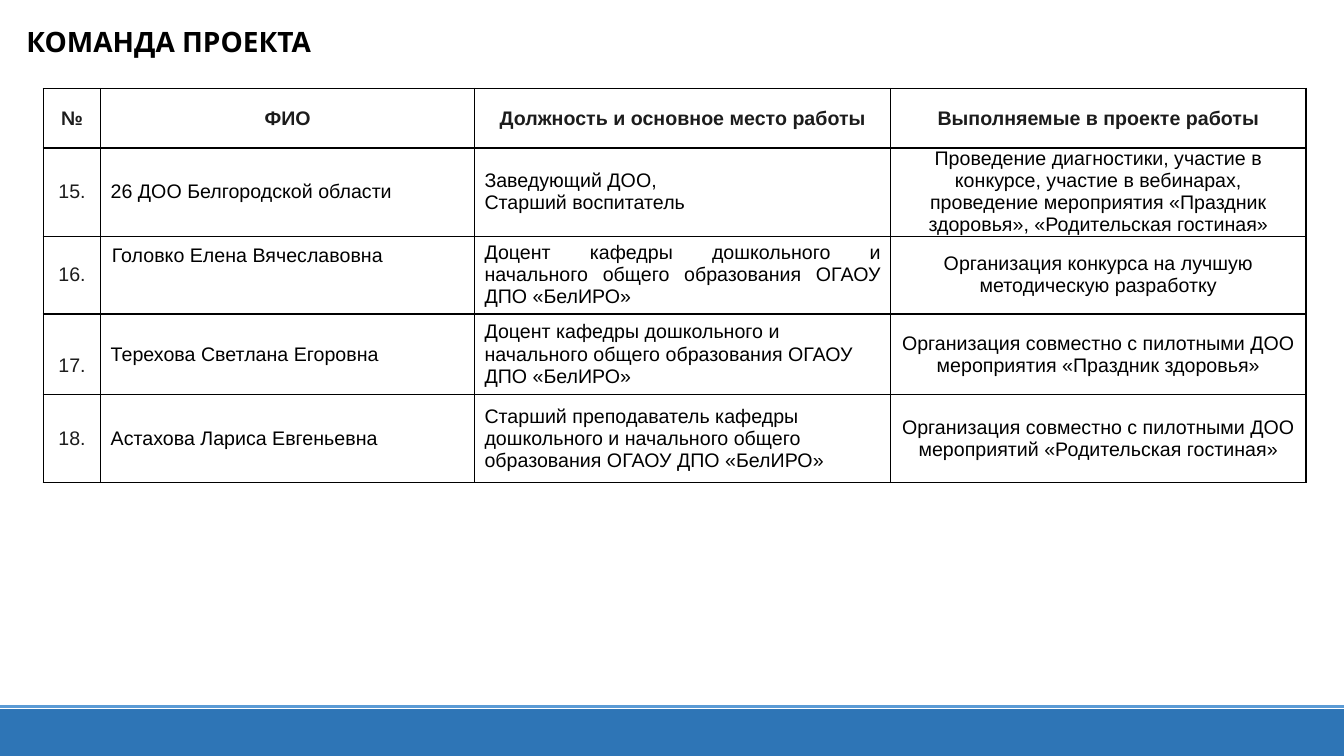
from lxml import etree
from pptx import Presentation, util as u
from pptx.dml.color import RGBColor
from pptx.enum import shapes, text
from pptx.oxml import parse_xml
from pptx.oxml.ns import nsdecls, qn

COLORS = {"black": "000000", "ink": "1C1C1C", "band": "2E75B6", "stripe": "5B9BD5"}
ALIGN = text.PP_ALIGN
ANCHOR = text.MSO_ANCHOR
INSTITUTE = "начального общего образования ОГАОУ ДПО «БелИРО»"
HEADINGS = ["№", "ФИО", "Должность и основное место работы", "Выполняемые в проекте работы"]
MEMBERS = [
    ["15.", "26 ДОО Белгородской области", "Заведующий ДОО,\nСтарший воспитатель",
     "Проведение диагностики, участие в конкурсе, участие в вебинарах, "
     "проведение мероприятия «Праздник здоровья», «Родительская гостиная»"],
    ["16.", "Головко Елена Вячеславовна", f"Доцент кафедры дошкольного и {INSTITUTE}",
     "Организация конкурса на лучшую методическую разработку"],
    ["17.", "Терехова Светлана Егоровна", f"Доцент кафедры дошкольного и {INSTITUTE}",
     "Организация совместно с пилотными ДОО мероприятия «Праздник здоровья»"],
    ["18.", "Астахова Лариса Евгеньевна",
     f"Старший преподаватель кафедры дошкольного и {INSTITUTE}",
     "Организация совместно с пилотными ДОО мероприятий «Родительская гостиная»"],
]
COLUMN_WIDTHS = [1.45, 9.42, 10.49, 10.46]
ROW_HEIGHTS = [1.5, 2.21, 1.96, 2.03, 2.21]
COLUMN_ALIGN = [ALIGN.CENTER, ALIGN.LEFT, ALIGN.LEFT, ALIGN.CENTER]
MARGINS = {"margin_left": 0.25, "margin_top": 0.13, "margin_right": 0.25, "margin_bottom": 0.13}
TASK_MARGINS = {"margin_left": 0.19, "margin_top": 0, "margin_right": 0.19, "margin_bottom": 0}
CELL_MARGINS = {(2, 1): {"margin_left": 0.28, "margin_right": 0.28}, (3, 0): {"margin_top": 0.69}}
CELL_ALIGN = {(1, 2): ALIGN.JUSTIFY, (2, 2): ALIGN.JUSTIFY}


def color(name):
    """Return a palette colour."""
    return RGBColor.from_string(COLORS[name])


def apply(target, values):
    """Set every attribute in values on the target."""
    for name, value in values.items():
        setattr(target, name, value)


def format_text(frame, font, paragraph_values):
    """Format all paragraphs and their text in a frame."""
    font = dict(font)
    font_color = color(font.pop("color"))
    for paragraph in frame.paragraphs:
        apply(paragraph, paragraph_values)
        for run in paragraph.runs:
            apply(run.font, font)
            run.font.color.rgb = font_color


def add_title(slide, left, top, width, height):
    """Place and format the slide title."""
    title = slide.shapes.title
    apply(title, {"left": u.Cm(left), "top": u.Cm(top),
                  "width": u.Cm(width), "height": u.Cm(height)})
    title.text_frame.text = "КОМАНДА ПРОЕКТА"
    apply(title.text_frame, {"vertical_anchor": ANCHOR.MIDDLE, "word_wrap": True,
                             "auto_size": text.MSO_AUTO_SIZE.NONE})
    format_text(title.text_frame,
                {"name": "Karla", "size": u.Pt(20), "bold": True, "color": "black"},
                {"alignment": ALIGN.LEFT, "line_spacing": 0.9})


def add_footer(slide, left, top, width, height):
    """Draw the bottom band with a thin stripe above it."""
    stripe = slide.shapes.add_connector(shapes.MSO_CONNECTOR.STRAIGHT, u.Cm(left), u.Cm(top),
                                        u.Cm(left + width), u.Cm(top))
    stripe.line.color.rgb = color("stripe")
    stripe.line.width = u.Pt(2.25)
    etree.SubElement(stripe.element.spPr, qn("a:effectLst"))
    gap = 0.08
    band = slide.shapes.add_shape(shapes.MSO_SHAPE.RECTANGLE, u.Cm(left), u.Cm(top + gap),
                                  u.Cm(width), u.Cm(height - gap))
    band.shadow.inherit = False
    band.fill.solid()
    band.fill.fore_color.rgb = color("band")
    band.line.color.rgb = color("band")
    band.line.width = u.Pt(1)


def add_borders(cell):
    """Give a cell thin black borders on all sides."""
    properties = cell._tc.get_or_add_tcPr()
    for side in "LRTB":
        properties.append(parse_xml(
            f'<a:ln{side} {nsdecls("a")} w="{u.Pt(1)}"><a:solidFill>'
            f'<a:srgbClr val="{COLORS["black"]}"/></a:solidFill></a:ln{side}>'))


def fill_cell(cell, row, column, content):
    """Write and format one cell by its place in the table."""
    heading = row == 0
    margins = TASK_MARGINS if column == 3 and not heading else MARGINS
    margins = {**margins, **CELL_MARGINS.get((row, column), {})}
    apply(cell, {name: u.Cm(value) for name, value in margins.items()})
    raised = (row, column) == (2, 1)
    cell.vertical_anchor = ANCHOR.TOP if raised else ANCHOR.MIDDLE
    cell.text = content
    alignment = ALIGN.CENTER if heading else CELL_ALIGN.get((row, column), COLUMN_ALIGN[column])
    format_text(cell.text_frame,
                {"name": "Arial", "size": u.Pt(14), "bold": heading,
                 "color": "ink" if heading or column == 0 else "black"},
                {"alignment": alignment, "line_spacing": 1.15 if raised else 1.0})
    add_borders(cell)
    cell.fill.background()


def add_team_table(slide, left, top):
    """Build the table of team members."""
    rows = [HEADINGS, *MEMBERS]
    table = slide.shapes.add_table(len(rows), len(HEADINGS), u.Cm(left), u.Cm(top),
                                   u.Cm(sum(COLUMN_WIDTHS)), u.Cm(sum(ROW_HEIGHTS))).table
    apply(table, {"first_row": False, "horz_banding": False})
    for column, width in zip(table.columns, COLUMN_WIDTHS):
        column.width = u.Cm(width)
    for row, height in zip(table.rows, ROW_HEIGHTS):
        row.height = u.Cm(height)
    for row, contents in enumerate(rows):
        for column, content in enumerate(contents):
            fill_cell(table.cell(row, column), row, column, content)


def main():
    """Build and save the presentation."""
    presentation = Presentation()
    apply(presentation, {"slide_width": u.Cm(33.87), "slide_height": u.Cm(19.05)})
    slide = presentation.slides.add_slide(presentation.slide_layouts[5])
    add_footer(slide, 0, 17.8, 33.87, 1.25)
    add_title(slide, 0.41, 0, 12.24, 2.21)
    add_team_table(slide, 1.09, 2.23)
    presentation.save("out.pptx")


if __name__ == "__main__":
    main()
